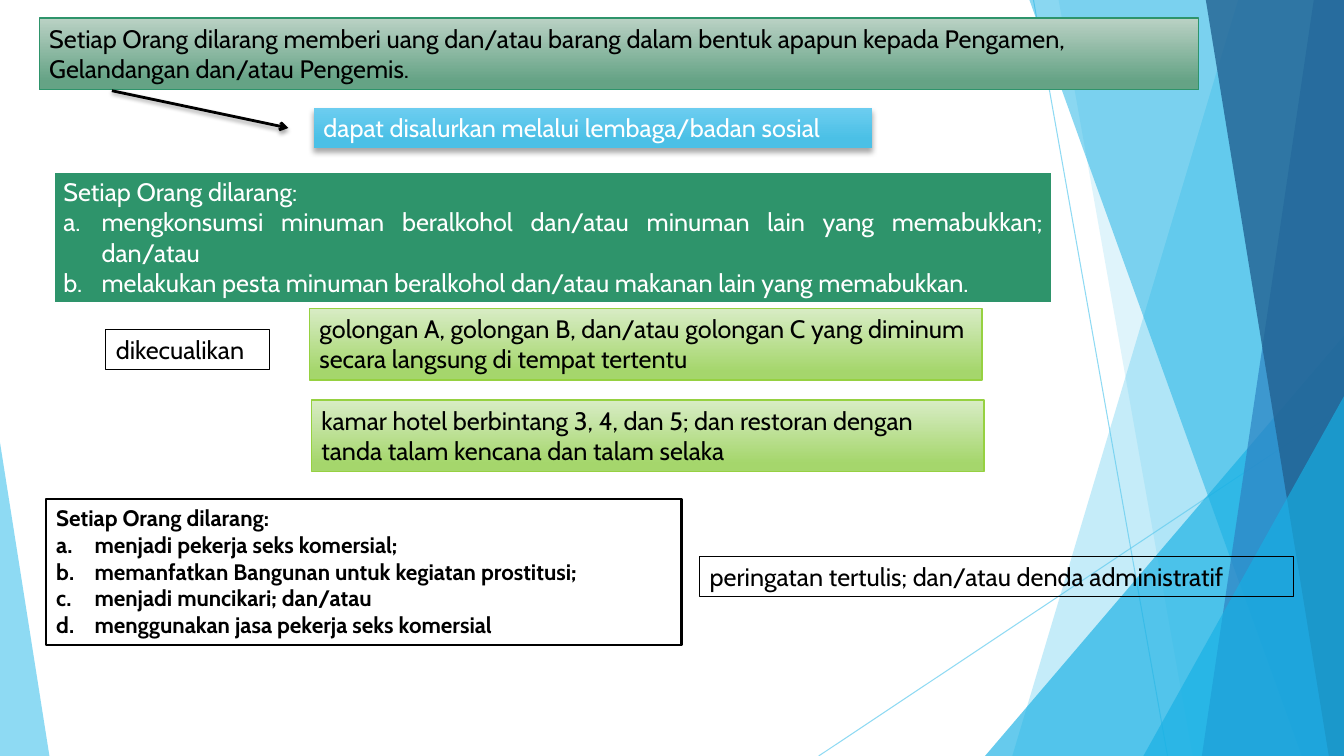
from lxml.etree import SubElement
from pptx import Presentation
from pptx.dml.color import RGBColor
from pptx.enum.shapes import MSO_CONNECTOR as Link, MSO_SHAPE as Preset
from pptx.enum.text import MSO_AUTO_SIZE as AutoSize, PP_ALIGN as Align
from pptx.oxml.ns import qn
from pptx.util import Inches, Pt

COLUMNS, ROWS = 13.33, 7.5
CELL = Inches(1)
FONT = "Cabin"
BLACK = RGBColor(0x00, 0x00, 0x00)
WHITE = RGBColor(0xFF, 0xFF, 0xFF)
SKY = RGBColor(0x5F, 0xCB, 0xEF)
CYAN = RGBColor(0x17, 0xB0, 0xE4)
BLUE = RGBColor(0x2E, 0x83, 0xC3)
NAVY = RGBColor(0x22, 0x62, 0x92)
GREEN = RGBColor(0x2E, 0x94, 0x6B)
LIME = RGBColor(0x96, 0xD1, 0x41)
SAGE_FADE = (RGBColor(0xBA, 0xD1, 0xC4), RGBColor(0x65, 0xA3, 0x85), 0.88)
SKY_FADE = (RGBColor(0x6C, 0xCD, 0xF0), RGBColor(0x4B, 0xC0, 0xE6), 0.78)
LIME_FADE = (RGBColor(0xD8, 0xEC, 0xC5), RGBColor(0xA5, 0xD6, 0x6C), 0.88)

RAYS = [((10.25, 0), (11.58, ROWS)), ((COLUMNS, 4.03), (8.12, ROWS))]
FACETS = [
    ("band", 12.28, 10.04, SKY, 36),
    ("band", 10.5, 11.83, SKY, 20),
    ("peak", (9.77, 3.33, 3.56), 1, CYAN, 66),
    ("band", 10.21, 12.91, CYAN, 50),
    ("band", 13.03, 11.92, BLUE, 70),
    ("band", 11.96, 13.18, NAVY, 80),
    ("peak", (11.34, 3.93, 1.99), 1, CYAN, 66),
    ("peak", (0, 4.39, 0.49), 0, SKY, 70),
]

ARROW = ((1.11, 0.9), (2.86, 1.27))
PLAIN = dict(fill=None, line=(BLACK, 0.75))
EXCEPTION = dict(fill=LIME_FADE, line=(LIME, 1))
RULES = [
    ((0.39, 0.18, 11.5, 0.71), dict(fill=SAGE_FADE, line=(GREEN, 1)),
     "Setiap Orang dilarang memberi uang dan/atau barang dalam bentuk apapun "
     "kepada Pengamen, Gelandangan dan/atau Pengemis.", []),
    ((3.11, 1.07, 5.54, 0.4), dict(fill=SKY_FADE, ink=WHITE, shadow=(4, 3)),
     "dapat disalurkan melalui lembaga/badan sosial", []),
    ((0.53, 1.7, 9.91, 1.31),
     dict(fill=GREEN, line=(WHITE, 2), ink=WHITE, align=Align.JUSTIFY),
     "Setiap Orang dilarang:",
     ["mengkonsumsi minuman beralkohol dan/atau minuman lain yang memabukkan; dan/atau",
      "melakukan pesta minuman beralkohol dan/atau makanan lain yang memabukkan."]),
    ((3.07, 3.06, 6.67, 0.71), EXCEPTION,
     "golongan A, golongan B, dan/atau golongan C yang diminum secara langsung "
     "di tempat tertentu", []),
    ((1.05, 3.27, 1.62, 0.4), PLAIN, "dikecualikan", []),
    ((3.09, 3.97, 6.67, 0.71), EXCEPTION,
     "kamar hotel berbintang 3, 4, dan 5; dan restoran dengan tanda talam kencana "
     "dan talam selaka", []),
    ((0.46, 4.95, 6.3, 1.45),
     dict(fill=WHITE, line=(BLACK, 1.5), size=16, bold=True),
     "Setiap Orang dilarang:",
     ["menjadi pekerja seks komersial;",
      "memanfatkan Bangunan untuk kegiatan prostitusi;",
      "menjadi muncikari; dan/atau",
      "menggunakan jasa pekerja seks komersial"]),
    ((6.94, 5.52, 5.89, 0.4), PLAIN,
     "peringatan tertulis; dan/atau denda administratif", []),
]


def cells(*lengths):
    return [round(length * CELL) for length in lengths]


def set_alpha(part, percent):
    for color in part.iter(qn("a:srgbClr")):
        SubElement(color, qn("a:alpha"), val=str(percent * 1000))


def add_shadow(part, blur=None, distance=None):
    effects = SubElement(part.spPr if hasattr(part, "spPr") else part, qn("a:effectLst"))
    if blur:
        shadow = SubElement(effects, qn("a:outerShdw"), blurRad=str(Pt(blur)),
                            dist=str(Pt(distance)), dir="5400000", rotWithShape="0")
        color = SubElement(shadow, qn("a:srgbClr"), val=str(BLACK))
        SubElement(color, qn("a:alpha"), val="35000")


def add_line(shapes, start, end, color, width):
    line = shapes.add_connector(Link.STRAIGHT, *cells(*start, *end))
    line.line.color.rgb = color
    line.line.width = Pt(width)
    return line


def add_facet(shapes, kind, place, slant, color, opacity):
    if kind == "band":
        outline = shapes.build_freeform(*cells(place, 0), scale=1.0)
        corners = [(COLUMNS, 0), (COLUMNS, ROWS), (slant, ROWS)]
        outline.add_line_segments([cells(*corner) for corner in corners])
        facet = outline.convert_to_shape()
    else:
        left, top, width = place
        facet = shapes.add_shape(Preset.ISOSCELES_TRIANGLE,
                                 *cells(left, top, width, ROWS - top))
        facet.adjustments[0] = slant
    facet.fill.solid()
    facet.fill.fore_color.rgb = color
    set_alpha(facet.fill._xPr, opacity)
    facet.line.fill.background()
    facet.shadow.inherit = False


def paint(fill, paint_with):
    if isinstance(paint_with, RGBColor):
        fill.solid()
        fill.fore_color.rgb = paint_with
    elif paint_with:
        upper, lower, reach = paint_with
        fill.gradient()
        fill.gradient_angle = 270
        for stop, color, position in zip(fill.gradient_stops, (upper, lower), (0, reach)):
            stop.color.rgb = color
            stop.position = position


def add_rule(shapes, place, heading, items, fill, line=None, ink=BLACK, size=18,
             bold=False, align=Align.LEFT, shadow=None):
    box = shapes.add_textbox(*cells(*place))
    paint(box.fill, fill)
    if line:
        box.line.color.rgb = line[0]
        box.line.width = Pt(line[1])
    if shadow:
        add_shadow(box.element.spPr, *shadow)
    frame = box.text_frame
    frame.text = "\n".join([heading, *items])
    frame.word_wrap = True
    frame.auto_size = AutoSize.SHAPE_TO_FIT_TEXT
    for number, paragraph in enumerate(frame.paragraphs):
        paragraph.alignment = align
        font = paragraph.runs[0].font
        font.name, font.size, font.bold = FONT, Pt(size), bold
        font.color.rgb = ink
        if number:
            properties = paragraph._p.get_or_add_pPr()
            properties.set("marL", str(Inches(0.38)))
            properties.set("indent", str(-Inches(0.38)))
            SubElement(properties, qn("a:buFont"), typeface="+mj-lt")
            SubElement(properties, qn("a:buAutoNum"), type="alphaLcPeriod")


def main():
    deck = Presentation()
    deck.slide_width, deck.slide_height = cells(COLUMNS, ROWS)
    shapes = deck.slides.add_slide(deck.slide_layouts[6]).shapes
    for start, end in RAYS:
        ray = add_line(shapes, start, end, SKY, 0.75)
        set_alpha(ray.element.spPr, 70)
        add_shadow(ray.element.spPr)
    for facet in FACETS:
        add_facet(shapes, *facet)
    for place, style, heading, items in RULES:
        add_rule(shapes, place, heading, items, **style)
    arrow = add_line(shapes, *ARROW, BLACK, 2)
    SubElement(arrow.line._get_or_add_ln(), qn("a:tailEnd"), type="arrow")
    add_shadow(arrow.element.spPr, 3, 2)
    deck.save("out.pptx")


if __name__ == "__main__":
    main()
